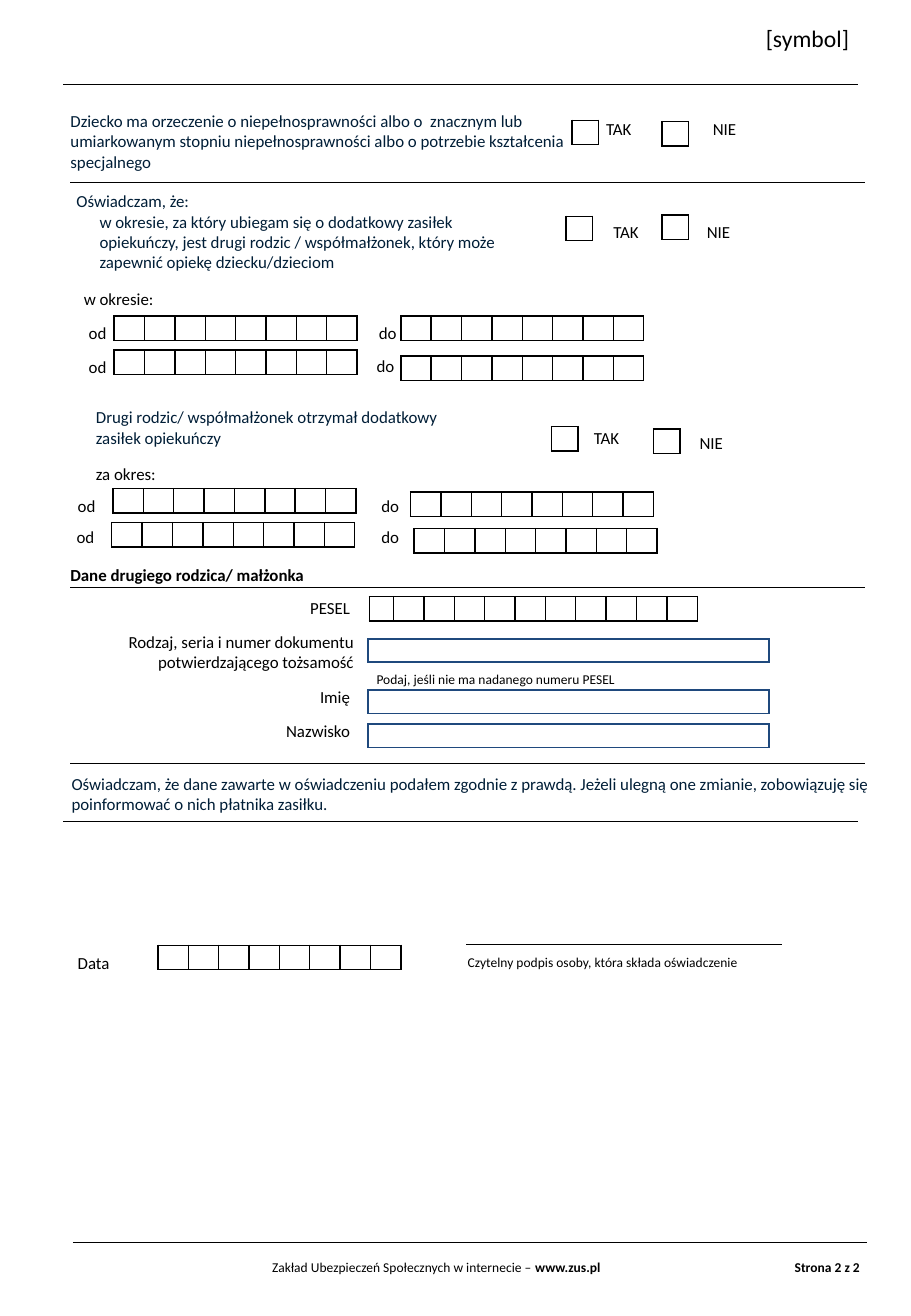
from lxml.etree import SubElement
from pptx import Presentation
from pptx.dml.color import RGBColor
from pptx.enum.shapes import MSO_CONNECTOR
from pptx.enum.text import MSO_ANCHOR, MSO_AUTO_SIZE, PP_ALIGN
from pptx.oxml.ns import qn
from pptx.util import Pt

PX = 9144
FONT = "Calibri"
BLACK = RGBColor(0x00, 0x00, 0x00)
NAVY = RGBColor(0x00, 0x1E, 0x37)
BLUE = RGBColor(0x1F, 0x49, 0x7D)
LEFT, RIGHT = PP_ALIGN.LEFT, PP_ALIGN.RIGHT
DATE_CELLS = [25] * 8
PESEL_CELLS = [20] + [25] * 10
TICK_CELL = [22]
FIELD_CELL = [330]


def add_run(p, text, size, color, bold=False):
    r = p.add_run()
    r.text = text
    r.font.name = FONT
    r.font.size = Pt(size)
    r.font.bold = bold
    r.font.color.rgb = color


def add_text_frame(s, x, y, w, h):
    sp = s.shapes.add_textbox(x * PX, y * PX, w * PX, h * PX)
    tf = sp.text_frame
    tf.word_wrap = True
    tf.auto_size = MSO_AUTO_SIZE.SHAPE_TO_FIT_TEXT
    tf.vertical_anchor = MSO_ANCHOR.MIDDLE
    tf.margin_left = tf.margin_right = tf.margin_top = tf.margin_bottom = 6 * PX
    return tf


def add_text(s, text, x, y, w, h=28, size=10, color=BLACK, bold=False, align=LEFT):
    p = add_text_frame(s, x, y, w, h).paragraphs[0]
    p.alignment = align
    add_run(p, text, size, color, bold)
    return p


def add_statement(s, lines, x, y, w, h):
    tf = add_text_frame(s, x, y, w, h)
    for i, (text, level) in enumerate(lines):
        p = tf.paragraphs[0] if i == 0 else tf.add_paragraph()
        p.level = level
        if level:
            pPr = p._p.get_or_add_pPr()
            pPr.set("marL", str(19 * PX))
            pPr.set("indent", "0")
        add_run(p, text, 10, NAVY)


def add_rule(s, x, y, w):
    line = s.shapes.add_connector(
        MSO_CONNECTOR.STRAIGHT, x * PX, y * PX, (x + w) * PX, y * PX)
    line.line.color.rgb = BLACK
    line.line.width = Pt(0.25)
    SubElement(line._element.spPr, qn("a:effectLst"))


def set_borders(cell, color):
    tcPr = cell._tc.get_or_add_tcPr()
    for i, side in enumerate(("lnL", "lnR", "lnT", "lnB")):
        ln = tcPr.makeelement(qn(f"a:{side}"), {"w": str(Pt(1))})
        fill = SubElement(ln, qn("a:solidFill"))
        SubElement(fill, qn("a:srgbClr"), val=str(color))
        tcPr.insert(i, ln)


def add_boxes(s, widths, x, y, h=20, color=BLACK):
    frame = s.shapes.add_table(
        1, len(widths), x * PX, y * PX, sum(widths) * PX, h * PX)
    table = frame.table
    table.first_row = table.horz_banding = False
    table.rows[0].height = h * PX
    for i, w in enumerate(widths):
        table.columns[i].width = w * PX
        cell = table.cell(0, i)
        cell.margin_left = cell.margin_right = 0
        cell.margin_top = cell.margin_bottom = 0
        cell.fill.background()
        set_borders(cell, color)
        SubElement(cell.text_frame.paragraphs[0]._p, qn("a:endParaRPr"), sz="800")


def add_answer(s, label, box_x, box_y, label_x, label_y):
    add_boxes(s, TICK_CELL, box_x, box_y)
    add_text(s, label, label_x, label_y, 126)


def add_date(s, label, label_x, label_y, box_x, box_y, w=71):
    add_boxes(s, DATE_CELLS, box_x, box_y)
    add_text(s, label, label_x, label_y, w)


def add_questions(s):
    add_text(s, "Dziecko ma orzeczenie o niepełnosprawności albo o  znacznym lub "
             "umiarkowanym stopniu niepełnosprawności albo o potrzebie kształcenia "
             "specjalnego", 52, 85, 422, 62, color=NAVY)
    add_statement(s, [
        ("Oświadczam, że:", 0),
        ("w okresie, za który ubiegam się o dodatkowy zasiłek", 1),
        ("opiekuńczy, jest drugi rodzic / współmałżonek, który może", 1),
        ("zapewnić opiekę dziecku/dzieciom", 1),
    ], 57, 151, 373, 79)
    add_statement(s, [
        ("Drugi rodzic/ współmałżonek otrzymał dodatkowy", 1),
        ("zasiłek opiekuńczy", 1),
    ], 54, 329, 353, 45)
    for answer in [
        ("TAK", 471, 99, 493, 92), ("NIE", 545, 100, 581, 92),
        ("TAK", 466, 178, 499, 177), ("NIE", 545, 177, 576, 177),
        ("TAK", 454, 351, 483, 346), ("NIE", 538, 353, 570, 350),
    ]:
        add_answer(s, *answer)


def add_periods(s):
    add_text(s, "w okresie:", 63, 232, 79)
    add_text(s, "za okres:", 73, 376, 79)
    for date in [
        ("od", 67, 260, 94, 260), ("do", 306, 260, 330, 260),
        ("od", 67, 288, 94, 288), ("do", 304, 287, 330, 293),
        ("od", 58, 402, 93, 402), ("do", 308, 402, 338, 405),
        ("od", 57, 428, 92, 430), ("do", 308, 428, 341, 435),
    ]:
        add_date(s, *date)


def add_parent_data(s):
    add_text(s, "Dane drugiego rodzica/ małżonka", 52, 459, 654, bold=True)
    add_boxes(s, PESEL_CELLS, 304, 491)
    for y in (526, 568, 596):
        add_boxes(s, FIELD_CELL, 303, y, 19, BLUE)
    for label, y in (("PESEL", 486), ("Imię", 559), ("Nazwisko", 587)):
        add_text(s, label, 215, y, 79, align=RIGHT)
    add_text(s, "Rodzaj, seria i numer dokumentu potwierdzającego tożsamość",
             92, 514, 205, 45, align=RIGHT)
    add_text(s, "Podaj, jeśli nie ma nadanego numeru PESEL", 304, 546, 339, 25, 8)


def add_signature(s):
    add_text(s, "Oświadczam, że dane zawarte w oświadczeniu podałem zgodnie z prawdą. "
             "Jeżeli ulegną one zmianie, zobowiązuję się poinformować o nich płatnika "
             "zasiłku.", 53, 631, 676, 45, color=NAVY)
    add_date(s, "Data", 58, 778, 130, 778, 79)
    add_text(s, "Czytelny podpis osoby, która składa oświadczenie", 379, 779, 260, 25, 8)


def add_header_and_footer(s):
    add_text(s, "[symbol]", 603, 14, 102, 35, 14, align=RIGHT)
    p = add_text(s, "Zakład Ubezpieczeń Społecznych w internecie – ",
                 218, 1030, 307, 25, 8)
    add_run(p, "www.zus.pl", 8, BLACK, True)
    add_text(s, "Strona 2 z 2", 454, 1030, 260, 25, 8, bold=True, align=RIGHT)


def main():
    prs = Presentation()
    prs.slide_width, prs.slide_height = 750 * PX, 1083 * PX
    s = prs.slides.add_slide(prs.slide_layouts[6])
    for x, y in ((52, 69), (58, 150), (58, 483), (58, 628), (52, 676), (60, 1022)):
        add_rule(s, x, y, 654)
    add_rule(s, 384, 777, 260)
    add_header_and_footer(s)
    add_questions(s)
    add_periods(s)
    add_parent_data(s)
    add_signature(s)
    prs.save("out.pptx")


if __name__ == "__main__":
    main()
